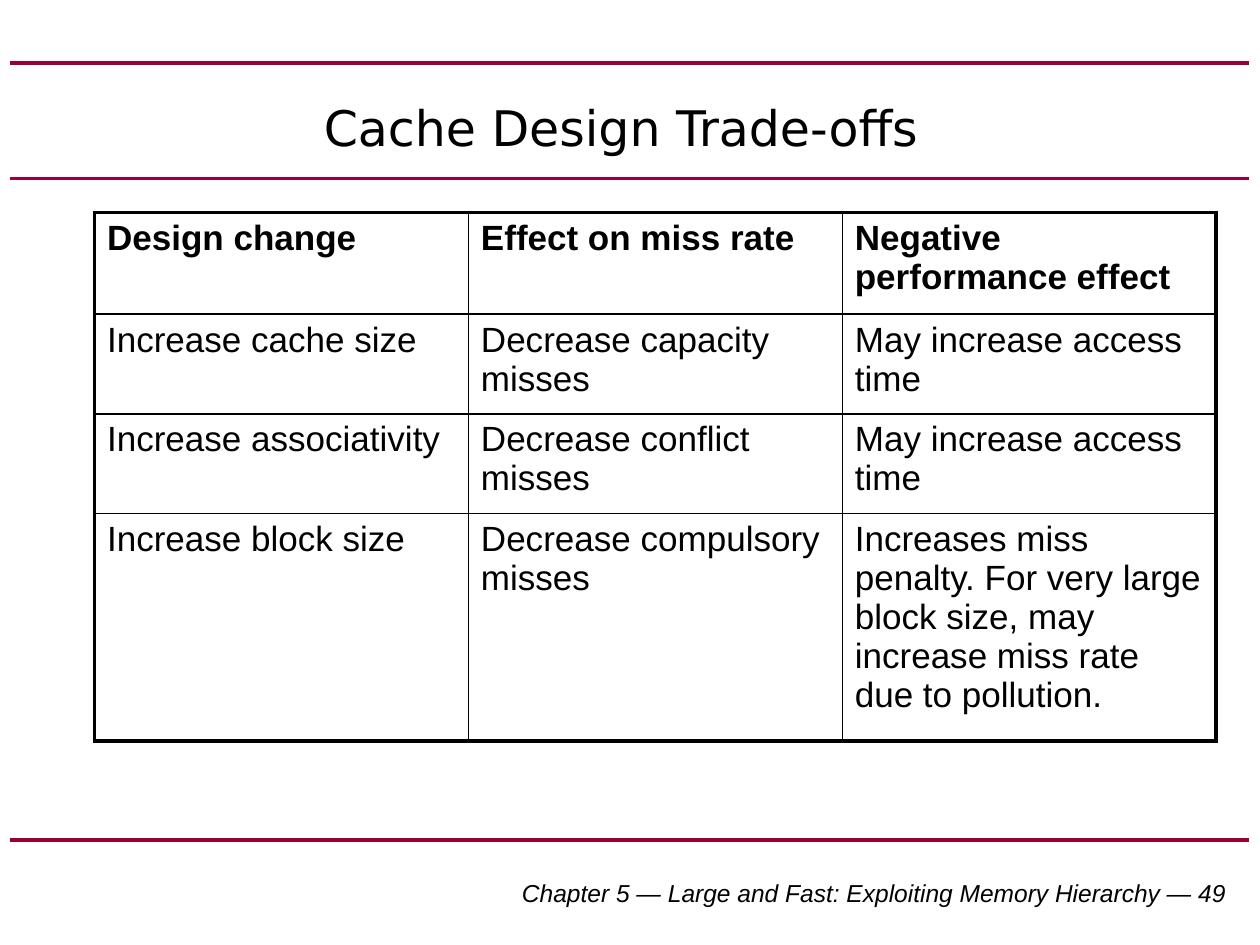
from lxml import etree
from pptx import Presentation
from pptx.dml.color import RGBColor
from pptx.enum.shapes import MSO_CONNECTOR
from pptx.enum.text import MSO_ANCHOR, PP_ALIGN
from pptx.oxml.ns import qn
from pptx.util import Pt

STRAIGHT = MSO_CONNECTOR.STRAIGHT
MIDDLE = MSO_ANCHOR.MIDDLE
CENTER = PP_ALIGN.CENTER
RIGHT = PP_ALIGN.RIGHT
LEFT = PP_ALIGN.LEFT

COLORS = {"rule": "990033", "ink": "000000"}
ROWS = [
    ("Design change", "Effect on miss rate", "Negative performance effect"),
    ("Increase cache size", "Decrease capacity misses", "May increase access time"),
    ("Increase associativity", "Decrease conflict misses", "May increase access time"),
    ("Increase block size", "Decrease compulsory misses",
     "Increases miss penalty. For very large block size, "
     "may increase miss rate due to pollution."),
]
HEIGHTS = [58, 57, 57, 130]


class Deck:
    font = "Arial"
    outer, header, inner = 2.25, 1.5, 1

    def __init__(self, slide):
        self.slide = slide

    def add_run(self, frame, text, size, align=LEFT, font=None, bold=False, italic=False):
        para = frame.paragraphs[0]
        para.alignment = align
        run = para.add_run()
        run.text = text
        run.font.name = font or self.font
        run.font.size = Pt(size)
        run.font.bold = bold
        run.font.italic = italic
        run.font.color.rgb = RGBColor.from_string(COLORS["ink"])

    def place(self, shape, left, top, width, height):
        shape.left, shape.top = Pt(left), Pt(top)
        shape.width, shape.height = Pt(width), Pt(height)

    def rule(self, y):
        line = self.slide.shapes.add_connector(STRAIGHT, Pt(6), Pt(y), Pt(714), Pt(y))
        line.line.color.rgb = RGBColor.from_string(COLORS["rule"])
        line.line.width = Pt(2.25)
        etree.SubElement(line._element.spPr, qn("a:effectLst"))

    def title(self, text, *box):
        shape = self.slide.shapes.title
        self.place(shape, *box)
        shape.text_frame.vertical_anchor = MIDDLE
        self.add_run(shape.text_frame, text, 28, CENTER, "DejaVu Sans")

    def footer(self, text, *box):
        shape = self.slide.shapes.add_textbox(*map(Pt, box))
        shape.text_frame.word_wrap = True
        self.add_run(shape.text_frame, text, 14, RIGHT, italic=True)

    def border(self, cell, side, width):
        props = cell._tc.get_or_add_tcPr()
        line = etree.SubElement(props, qn("a:ln" + side), w=str(Pt(width)))
        fill = etree.SubElement(line, qn("a:solidFill"))
        etree.SubElement(fill, qn("a:srgbClr"), val=COLORS["ink"])

    def table(self, rows, heights, left, top, width):
        count, span = len(rows), len(rows[0])
        shape = self.slide.shapes.add_table(
            count, span, Pt(left), Pt(top), Pt(width), Pt(sum(heights)))
        grid = shape.table
        grid.horz_banding = False
        across = [self.outer] + [self.inner] * (span - 1) + [self.outer]
        down = [self.outer, self.header] + [self.inner] * (count - 2) + [self.outer]
        for col in grid.columns:
            col.width = Pt(width / span)
        for r, (row, height) in enumerate(zip(rows, heights)):
            grid.rows[r].height = Pt(height)
            for c, text in enumerate(row):
                cell = grid.cell(r, c)
                self.add_run(cell.text_frame, text, 20, bold=r == 0)
                self.border(cell, "L", across[c])
                self.border(cell, "R", across[c + 1])
                self.border(cell, "T", down[r])
                self.border(cell, "B", down[r + 1])
                cell.fill.background()


def main():
    show = Presentation()
    show.slide_width, show.slide_height = Pt(720), Pt(540)
    deck = Deck(show.slides.add_slide(show.slide_layouts[5]))
    for y in (480, 102, 36):
        deck.rule(y)
    deck.footer("Chapter 5 — Large and Fast: Exploiting Memory Hierarchy — 49",
                270, 498, 438, 24)
    deck.title("Cache Design Trade-offs", 48, 42, 613.5, 60.5)
    deck.table(ROWS, HEIGHTS, 54, 121.5, 641)
    show.save("out.pptx")


if __name__ == "__main__":
    main()
